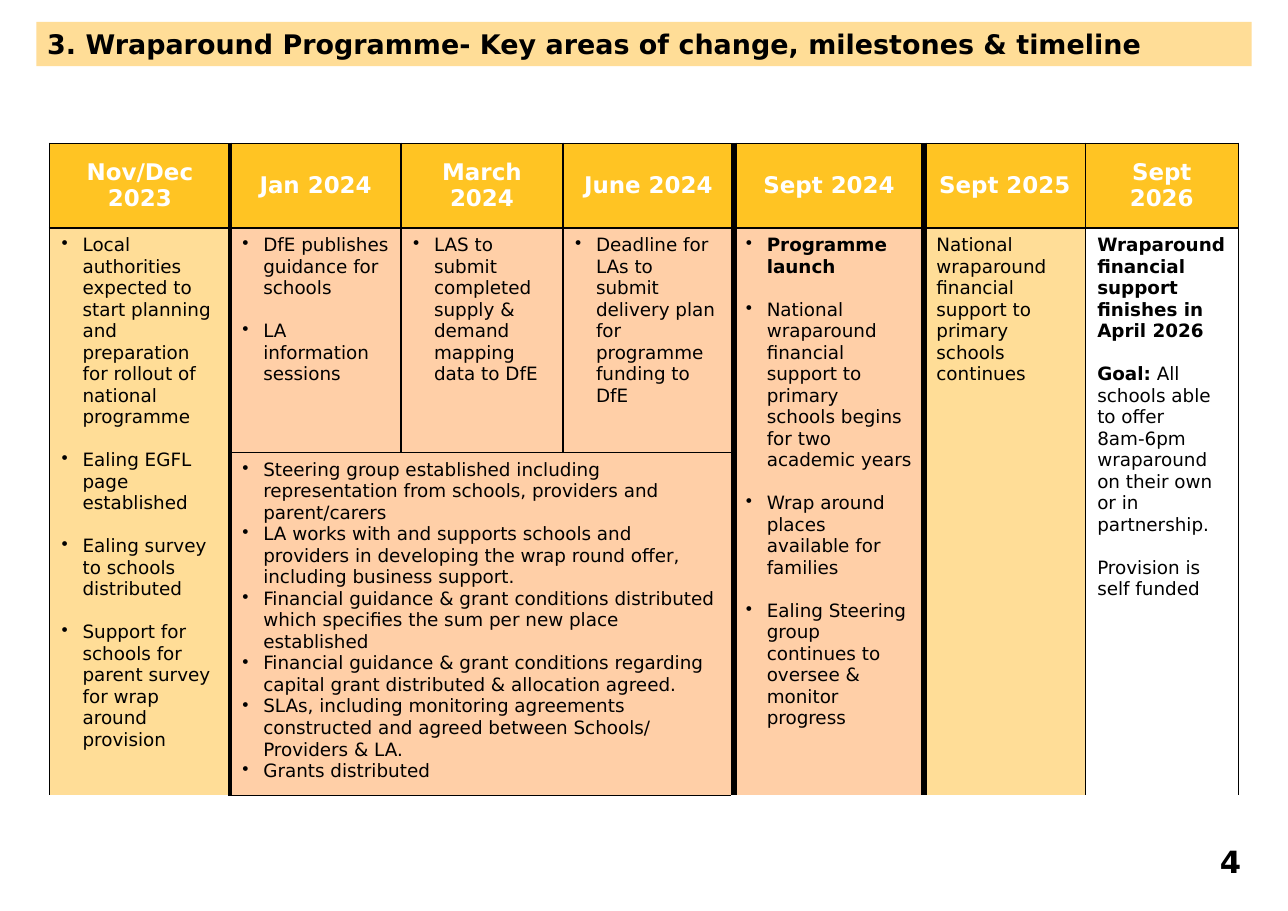
from lxml import etree
from pptx import Presentation
from pptx.dml.color import RGBColor
from pptx.enum import shapes, text
from pptx.oxml import ns
from pptx.util import Inches, Pt

FONT = "DejaVu Sans"
HUES = {"ink": "000000", "white": "FFFFFF", "gold": "FFC423",
        "sand": "FFDD97", "peach": "FFCFA7"}
COLS = [1.64, 1.55, 1.47, 1.55, 1.73, 1.46, 1.39]
ROWS = [0.77, 2.04, 3.11]
EDGES = [1, 3, 1, 1, 4.5, 4.5, 1, 1]  # rule width at each column boundary
GAP = 14
DATES = ["Nov/Dec\n2023", "Jan 2024", "March 2024", "June 2024",
         "Sept 2024", "Sept 2025", "Sept 2026"]

# row, column, rows spanned, columns spanned, fill, bullets, gap, text
BLOCKS = [
    (1, 0, 2, 1, "sand", True, GAP, """\
Local authorities expected to start planning and preparation for rollout of national programme
Ealing EGFL page established
Ealing survey to schools distributed
Support for schools for parent survey for wrap around provision"""),
    (1, 1, 1, 1, "peach", True, GAP, """\
DfE publishes guidance for schools
LA information sessions"""),
    (1, 2, 1, 1, "peach", True, GAP,
     "LAS to submit completed supply & demand mapping data to DfE"),
    (1, 3, 1, 1, "peach", True, GAP,
     "Deadline for LAs to submit delivery plan for programme funding to DfE"),
    (1, 4, 2, 1, "peach", True, GAP, """\
**Programme launch**
National wraparound financial support to primary schools begins for two academic years
Wrap around places available for families
Ealing Steering group continues to oversee & monitor progress"""),
    (1, 5, 2, 1, "sand", False, GAP,
     "National wraparound financial support to primary schools continues"),
    (1, 6, 2, 1, "white", False, GAP, """\
**Wraparound financial support finishes in April 2026**
**Goal:** All schools able to offer 8am-6pm wraparound on their own or in partnership.
Provision is self funded"""),
    (2, 1, 1, 3, "peach", True, 0, """\
Steering group established including representation from schools, providers and parent/carers
LA works with and supports schools and providers in developing the wrap round offer, including business support.
Financial guidance & grant conditions distributed which specifies the sum per new place established
Financial guidance & grant conditions regarding capital grant distributed & allocation agreed.
SLAs, including monitoring agreements constructed and agreed between Schools/ Providers & LA.
Grants distributed"""),
]


def hue(name):
    return RGBColor.from_string(HUES[name])


def paint(item, name):
    item.fill.solid()
    item.fill.fore_color.rgb = hue(name)


def write(frame, words, size=12, color="ink", bold=False, align="LEFT",
          bullet=False, gap=0):
    """Fill a frame, one paragraph a line; ** switches bold on and off."""
    frame.word_wrap = True
    for i, line in enumerate(words.split("\n")):
        para = frame.add_paragraph() if i else frame.paragraphs[0]
        para.alignment = getattr(text.PP_ALIGN, align)
        para.space_before = Pt(gap if i else 0)
        if bullet:
            props = para._p.get_or_add_pPr()
            props.set("marL", str(Inches(0.19)))
            props.set("indent", str(-Inches(0.19)))
            etree.SubElement(props, ns.qn("a:buChar"), char="•")
        for j, part in enumerate(line.split("**")):
            if part:
                run = para.add_run()
                run.text = part
                run.font.name = FONT
                run.font.size = Pt(size)
                run.font.bold = bold or j % 2 == 1
                run.font.color.rgb = hue(color)


def rule(cell, sides):
    """Draw cell borders; sides lists (tag, width) in schema order."""
    props = cell._tc.get_or_add_tcPr()
    for i, (tag, width) in enumerate(sides):
        line = etree.Element(ns.qn("a:" + tag), w=str(Pt(width)))
        fill = etree.SubElement(line, ns.qn("a:solidFill"))
        etree.SubElement(fill, ns.qn("a:srgbClr"), val=HUES["ink"])
        props.insert(i, line)


def block(grid, row, col, down, across, fill, words, **style):
    """Merge, border, fill and write one block of the grid."""
    cell = grid.cell(row, col)
    last, end = row + down - 1, col + across - 1
    if down * across > 1:
        cell.merge(grid.cell(last, end))
    for r in range(row, last + 1):
        for c in range(col, end + 1):
            sides = [("lnL", EDGES[c], c == col), ("lnR", EDGES[c + 1], c == end),
                     ("lnT", 1, r == row), ("lnB", 1, r == last)]
            part = grid.cell(r, c)
            paint(part, fill)
            rule(part, [(tag, width) for tag, width, edge in sides if edge])
    cell.margin_left = cell.margin_right = Inches(0.11)
    cell.margin_top = cell.margin_bottom = Inches(0.06)
    cell.vertical_anchor = text.MSO_ANCHOR.TOP if row else text.MSO_ANCHOR.MIDDLE
    write(cell.text_frame, words, **style)


def title(slide, box):
    bar = slide.shapes.add_shape(shapes.MSO_SHAPE.RECTANGLE, *map(Inches, box))
    bar.shadow.inherit = False
    paint(bar, "sand")
    bar.line.fill.background()
    bar.text_frame.vertical_anchor = text.MSO_ANCHOR.MIDDLE
    write(bar.text_frame, "3. Wraparound Programme- Key areas of change, "
          "milestones & timeline", size=17.6, bold=True)


def timeline(slide, box):
    grid = slide.shapes.add_table(len(ROWS), len(COLS), *map(Inches, box)).table
    grid.first_row = grid.horz_banding = False
    for col, width in zip(grid.columns, COLS):
        col.width = Inches(width)
    for row, height in zip(grid.rows, ROWS):
        row.height = Inches(height)
    for i, date in enumerate(DATES):
        block(grid, 0, i, 1, 1, "gold", date, size=15, color="white",
              bold=True, align="CENTER")
    for row, col, down, across, fill, bullet, gap, words in BLOCKS:
        block(grid, row, col, down, across, fill, words, bullet=bullet, gap=gap)


def number(slide, box):
    frame = slide.shapes.add_textbox(*map(Inches, box)).text_frame
    write(frame, "4", size=20, bold=True, align="CENTER")


def main():
    deck = Presentation()
    deck.slide_width, deck.slide_height = Inches(11.69), Inches(8.27)
    slide = deck.slides.add_slide(deck.slide_layouts[6])
    title(slide, (0.33, 0.2, 11.03, 0.4))
    timeline(slide, (0.45, 1.3, sum(COLS), sum(ROWS)))
    number(slide, (10.9, 7.6, 0.54, 0.44))
    deck.save("out.pptx")


if __name__ == "__main__":
    main()
